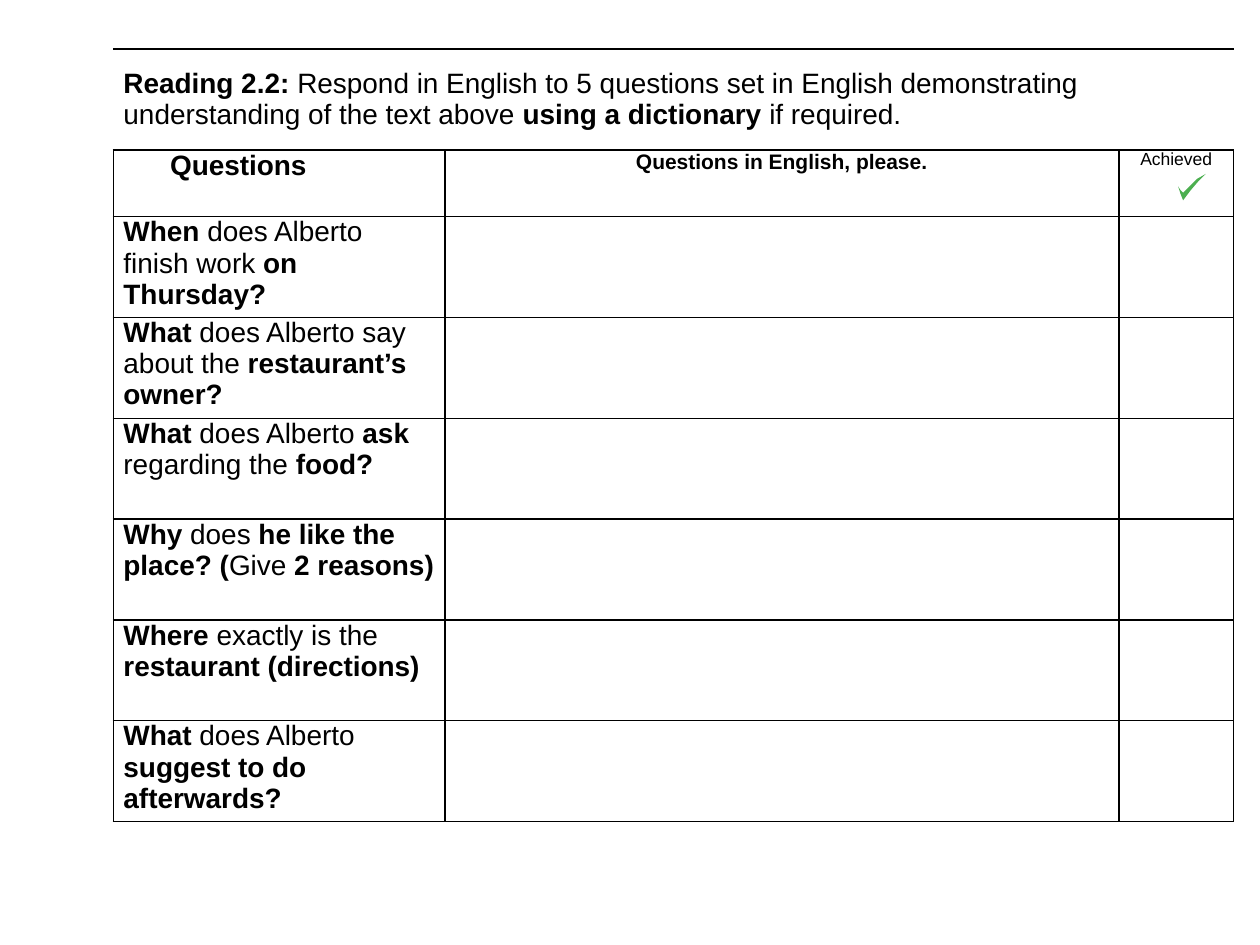
from dataclasses import dataclass

from pptx import Presentation
from pptx.dml.color import RGBColor
from pptx.enum.text import MSO_ANCHOR as Anchor, PP_ALIGN as Align
from pptx.oxml.ns import qn
from pptx.util import Inches, Pt
from lxml.etree import SubElement

W, H = 10, 7.5
COLS = [0.263, 0.535, 0.091]
ROWS = [0.8, 0.53] + [0.8] * 6
BLACK, GREEN = "000000", "4CAF50"


@dataclass
class CellText:
    row: int
    col: int
    runs: tuple[str, ...]
    size: float = 16
    align: Align = Align.LEFT
    bold_first: bool = True
    indent: float = 0


QUESTIONS = [
    ("When ", "does Alberto finish work", " on Thursday?"),
    ("What ", "does Alberto say about the", " restaurant’s owner?"),
    ("What ", "does Alberto", " ask ", "regarding the", " food?"),
    ("Why ", "does", " he like the place? (", "Give", " 2 reasons)"),
    ("Where ", "exactly is the ", "restaurant (directions)"),
    ("What ", "does Alberto", " suggest to do afterwards?"),
]
TEXTS = [
    CellText(0, 0, (
        "Reading 2.2:",
        " Respond in English to 5 questions set in English demonstrating "
        "understanding of the text above ",
        "using a dictionary ",
        "if required.",
    )),
    CellText(1, 0, ("Questions",), indent=0.37),
    CellText(1, 1, ("Questions in English, please.",), 12, Align.CENTER),
    CellText(1, 2, ("Achieved",), 10, Align.CENTER, False),
] + [CellText(i, 0, runs) for i, runs in enumerate(QUESTIONS, 2)]

TICK = [
    (9.57, 1.38), (9.5, 1.42), (9.44, 1.48), (9.39, 1.53), (9.37, 1.51),
    (9.35, 1.48), (9.37, 1.54), (9.39, 1.59), (9.45, 1.51), (9.51, 1.44),
]


def rgb(color: str) -> RGBColor:
    return RGBColor.from_string(color)


def set_all(obj, values: dict) -> None:
    for name, value in values.items():
        setattr(obj, name, value)


def draw_borders(cell, sides: str) -> None:
    tcPr = cell._tc.get_or_add_tcPr()
    for i, side in enumerate("LRTB"):
        ln = tcPr.makeelement(qn(f"a:ln{side}"), {"w": str(Pt(1))})
        tcPr.insert(i, ln)
        if side in sides:
            fill = SubElement(ln, qn("a:solidFill"))
            SubElement(fill, qn("a:srgbClr"), val=BLACK)
        else:
            SubElement(ln, qn("a:noFill"))


def write_cell(tbl, text: CellText) -> None:
    p = tbl.cell(text.row, text.col).text_frame.paragraphs[0]
    p.alignment = text.align
    if text.indent:
        p._p.get_or_add_pPr().set("marL", str(Inches(text.indent)))
    for i, words in enumerate(text.runs):
        r = p.add_run()
        r.text = words
        bold = (i % 2 == 0) == text.bold_first
        set_all(r.font, {"name": "Arial", "size": Pt(text.size), "bold": bold})
        r.font.color.rgb = rgb(BLACK)


def draw_table(s) -> None:
    tbl = s.shapes.add_table(
        len(ROWS), len(COLS), Inches(0.09 * W), Inches(0.052 * H),
        Inches(sum(COLS) * W), Inches(sum(ROWS)),
    ).table
    set_all(tbl, {"first_row": False, "horz_banding": False})
    for column, share in zip(tbl.columns, COLS):
        column.width = Inches(share * W)
    for i, height in enumerate(ROWS):
        tbl.rows[i].height = Inches(height)
        for j in range(len(COLS)):
            cell = tbl.cell(i, j)
            set_all(cell, {
                "margin_left": Inches(0.08), "margin_right": Inches(0.08),
                "margin_top": 0, "margin_bottom": 0,
                "vertical_anchor": Anchor.TOP if i else Anchor.MIDDLE,
            })
            cell.fill.background()
            draw_borders(cell, "LRTB" if i else "TB")
    tbl.cell(0, 0).merge(tbl.cell(0, 1))
    for text in TEXTS:
        write_cell(tbl, text)


def draw_tick(s) -> None:
    start, *rest = [(Inches(x), Inches(y)) for x, y in TICK]
    builder = s.shapes.build_freeform(*start)
    builder.add_line_segments(rest, close=True)
    sp = builder.convert_to_shape()
    sp.shadow.inherit = False
    sp.fill.solid()
    sp.fill.fore_color.rgb = rgb(GREEN)
    sp.line.fill.background()


def main() -> None:
    prs = Presentation()
    set_all(prs, {"slide_width": Inches(W), "slide_height": Inches(H)})
    s = prs.slides.add_slide(prs.slide_layouts[6])
    draw_table(s)
    draw_tick(s)
    prs.save("out.pptx")


if __name__ == "__main__":
    main()
